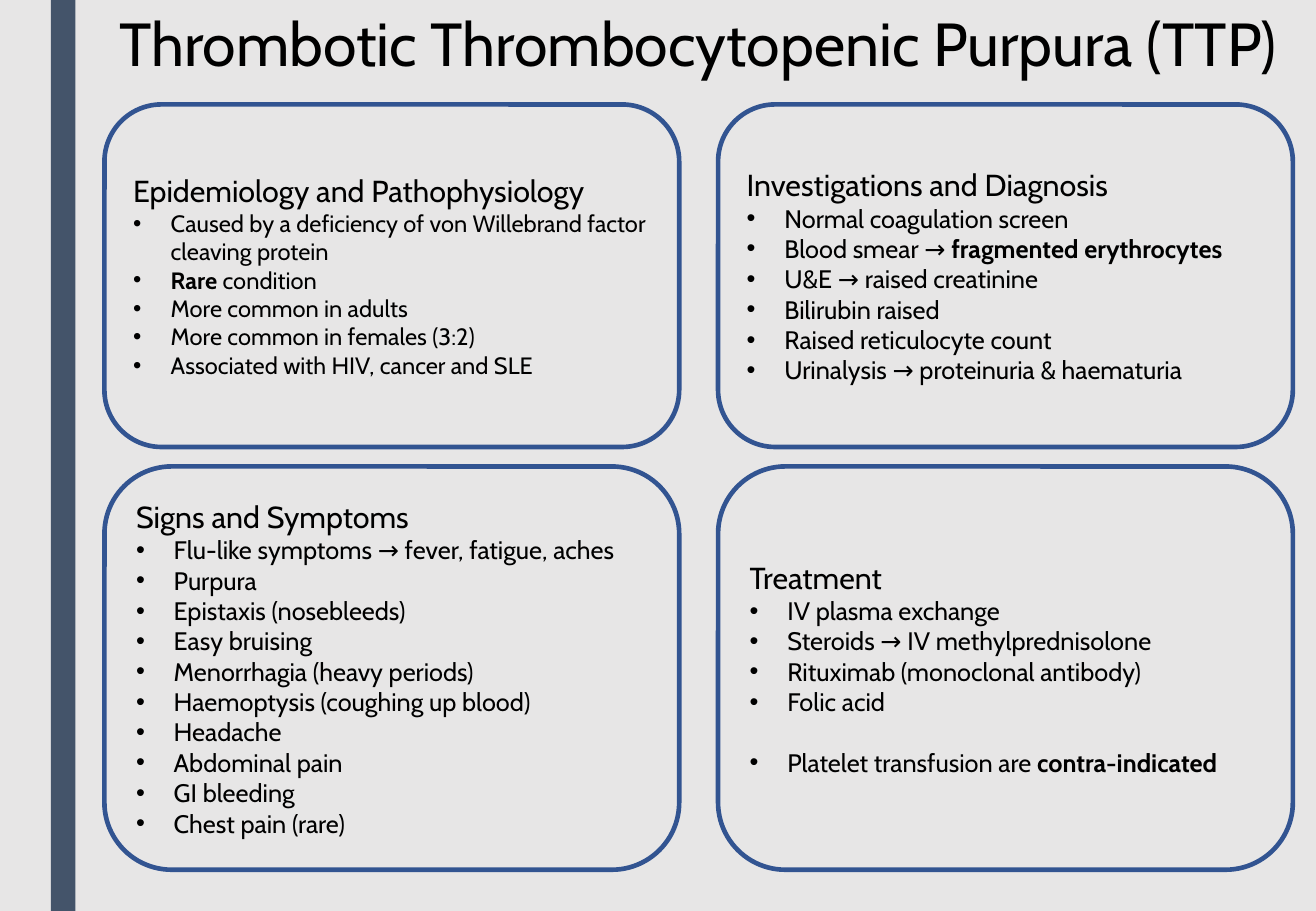
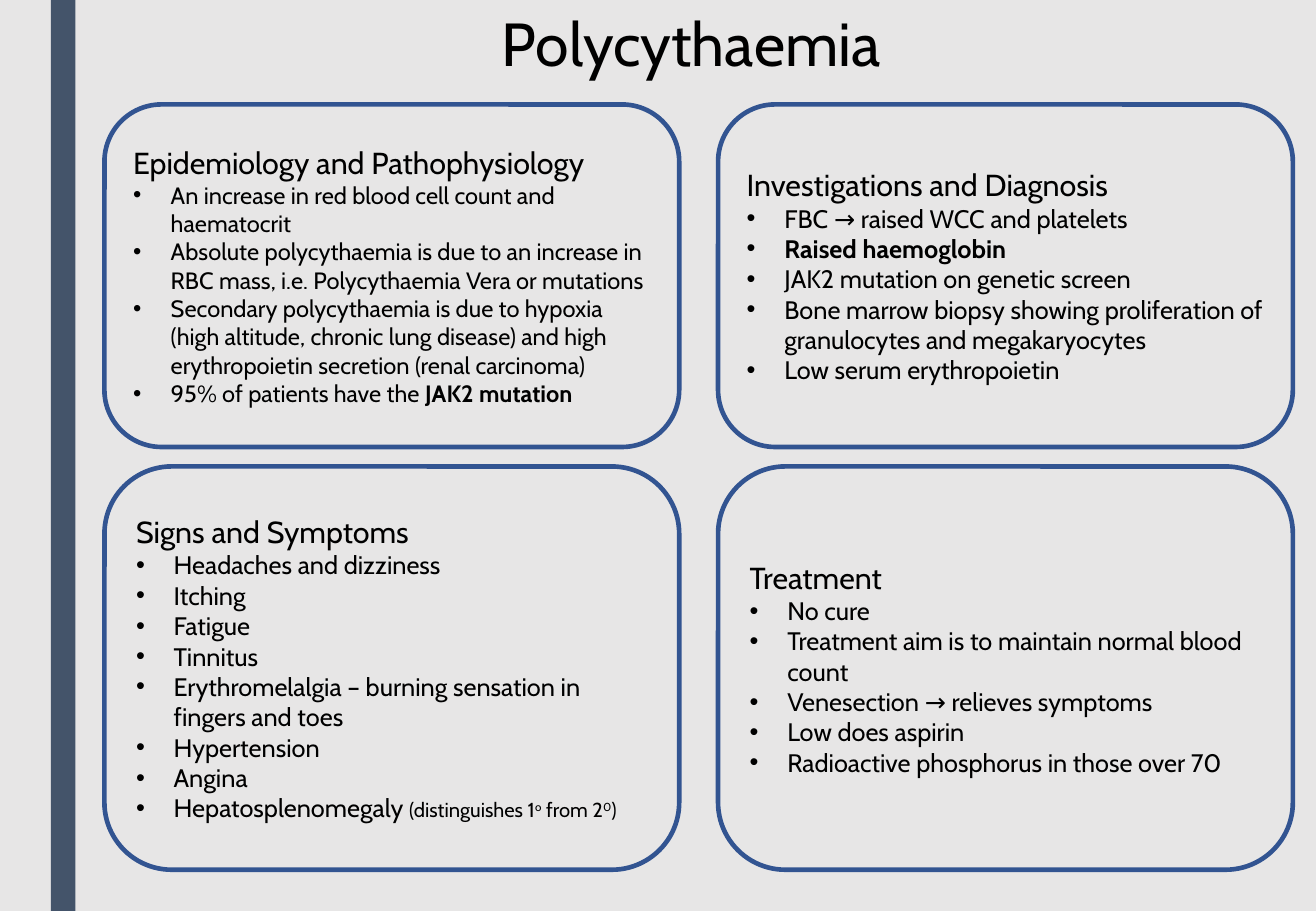
from lxml.etree import SubElement
from pptx import Presentation
from pptx.dml.color import RGBColor
from pptx.enum.shapes import MSO_SHAPE
from pptx.enum.text import MSO_ANCHOR, MSO_AUTO_SIZE, PP_ALIGN
from pptx.oxml.ns import qn
from pptx.util import Inches, Pt

COLOURS = {"background": "E7E6E6", "band": "44546A", "outline": "325491", "text": "000000"}
FONT = "Cabin"
TITLE_SIZE, HEADING_SIZE, BULLET_SIZE = 36, 18, 15

# Card grid: two equal columns, two rows given as (top, height)
CARD_LEFT, CARD_WIDTH, COLUMN_GAP = 0.86, 4.73, 0.32
CARD_ROWS = [(0.86, 2.82), (3.84, 3.32)]
BULLET_INDENT = 0.31

# Run styles
BOLD = {"bold": True}
SMALL = {"size": 12}
SMALL_RAISED = {"size": 12, "raised": True}


def colour(name):
    return RGBColor.from_string(COLOURS[name])


class Deck:
    """Holds the shared style and the slide being built."""

    def __init__(self):
        self.presentation = Presentation()
        self.presentation.slide_width = Inches(10.83)
        self.presentation.slide_height = Inches(7.5)
        self.layout = self.presentation.slide_layouts.get_by_name("Title Only")
        self.slide = None
        self.style_layout()

    def style_layout(self):
        background = self.presentation.slide_master.background.fill
        background.solid()
        background.fore_color.rgb = colour("background")
        title = self.layout.placeholders[0]
        title.left, title.top = Inches(0.66), Inches(0)
        title.width, title.height = Inches(10.17), Inches(0.71)

    def add_slide(self, title):
        self.slide = self.presentation.slides.add_slide(self.layout)
        frame = self.slide.shapes.title.text_frame
        frame.word_wrap = True
        frame.auto_size = MSO_AUTO_SIZE.NONE
        frame.vertical_anchor = MSO_ANCHOR.TOP
        paragraph = frame.paragraphs[0]
        paragraph.alignment = PP_ALIGN.CENTER
        self.add_run(paragraph, title, TITLE_SIZE)

    def add_band_to_layout(self):
        """Draw the side band, then move it to the layout all slides share."""
        band = self.slide.shapes.add_shape(
            MSO_SHAPE.RECTANGLE, Inches(0.42), Inches(0), Inches(0.2), Inches(7.5))
        band.shadow.inherit = False
        band.fill.solid()
        band.fill.fore_color.rgb = colour("band")
        band.line.fill.background()
        band.element.nvSpPr.cNvPr.set("id", "100")
        self.layout.shapes.element.insert(2, band.element)

    def add_card(self, row, column, heading, bullets, size=BULLET_SIZE):
        top, height = CARD_ROWS[row]
        left = CARD_LEFT + column * (CARD_WIDTH + COLUMN_GAP)
        card = self.slide.shapes.add_shape(
            MSO_SHAPE.ROUNDED_RECTANGLE,
            Inches(left), Inches(top), Inches(CARD_WIDTH), Inches(height))
        card.shadow.inherit = False
        card.fill.background()
        card.line.color.rgb = colour("outline")
        card.line.width = Pt(2.75)
        frame = card.text_frame
        frame.word_wrap = True
        frame.vertical_anchor = MSO_ANCHOR.MIDDLE
        paragraph = frame.paragraphs[0]
        paragraph.alignment = PP_ALIGN.LEFT
        self.add_run(paragraph, heading, HEADING_SIZE)
        for bullet in bullets:
            self.add_bullet(frame, bullet, size)
        return card

    def add_bullet(self, frame, bullet, size):
        """A bullet is a string or a list of (text, style) runs."""
        paragraph = frame.add_paragraph()
        paragraph.alignment = PP_ALIGN.LEFT
        properties = paragraph._p.get_or_add_pPr()
        properties.set("marL", str(Inches(BULLET_INDENT)))
        properties.set("indent", str(-Inches(BULLET_INDENT)))
        SubElement(properties, qn("a:buFont")).set("typeface", "Arial")
        SubElement(properties, qn("a:buChar")).set("char", "•")
        runs = [(bullet, {})] if isinstance(bullet, str) else bullet
        for text, style in runs:
            self.add_run(paragraph, text, **{"size": size, **style})

    def add_run(self, paragraph, text, size, bold=False, raised=False):
        run = paragraph.add_run()
        run.text = text
        run.font.name = FONT
        run.font.size = Pt(size)
        run.font.bold = bold
        run.font.color.rgb = colour("text")
        if raised:
            run._r.get_or_add_rPr().set("baseline", "30000")


def main():
    deck = Deck()

    # Thrombotic thrombocytopenic purpura
    deck.add_slide("Thrombotic Thrombocytopenic Purpura (TTP)")
    deck.add_band_to_layout()
    deck.add_card(0, 0, "Epidemiology and Pathophysiology", [
        "Caused by a deficiency of von Willebrand factor cleaving protein",
        [("Rare", BOLD), (" condition", {})],
        "More common in adults",
        "More common in females (3:2)",
        "Associated with HIV, cancer and SLE",
    ], size=14)
    deck.add_card(0, 1, "Investigations and Diagnosis", [
        "Normal coagulation screen",
        [("Blood smear → ", {}), ("fragmented erythrocytes", BOLD)],
        "U&E → raised creatinine",
        "Bilirubin raised",
        "Raised reticulocyte count",
        "Urinalysis → proteinuria & haematuria",
    ])
    deck.add_card(1, 0, "Signs and Symptoms", [
        "Flu-like symptoms → fever, fatigue, aches",
        "Purpura",
        "Epistaxis (nosebleeds)",
        "Easy bruising",
        "Menorrhagia (heavy periods)",
        "Haemoptysis (coughing up blood)",
        "Headache",
        "Abdominal pain",
        "GI bleeding",
        "Chest pain (rare)",
    ])
    treatment = deck.add_card(1, 1, "Treatment", [
        "IV plasma exchange",
        "Steroids → IV methylprednisolone",
        "Rituximab (monoclonal antibody)",
        "Folic acid",
        [("Platelet transfusion are ", {}), ("contra-indicated", BOLD)],
    ])
    # Set the warning apart by one line
    treatment.text_frame.paragraphs[-1].space_before = Pt(18)

    # Polycythaemia
    deck.add_slide("Polycythaemia ")
    deck.add_card(0, 0, "Epidemiology and Pathophysiology", [
        "An increase in red blood cell count and haematocrit",
        "Absolute polycythaemia is due to an increase in RBC mass, "
        "i.e. Polycythaemia Vera or mutations",
        "Secondary polycythaemia is due to hypoxia (high altitude, chronic lung disease) "
        "and high erythropoietin secretion (renal carcinoma)",
        [("95% of patients have the ", {}), ("JAK2 mutation", BOLD)],
    ], size=14)
    deck.add_card(0, 1, "Investigations and Diagnosis", [
        "FBC → raised WCC and platelets",
        [("Raised haemoglobin", BOLD)],
        "JAK2 mutation on genetic screen",
        "Bone marrow biopsy showing proliferation of granulocytes and megakaryocytes",
        "Low serum erythropoietin",
    ])
    deck.add_card(1, 0, "Signs and Symptoms", [
        "Headaches and dizziness",
        "Itching",
        "Fatigue",
        "Tinnitus",
        "Erythromelalgia – burning sensation in fingers and toes",
        "Hypertension",
        "Angina",
        [("Hepatosplenomegaly ", {}), ("(distinguishes 1", SMALL), ("o", SMALL_RAISED),
         (" from 2", SMALL), ("0", SMALL_RAISED), (")", SMALL)],
    ])
    deck.add_card(1, 1, "Treatment", [
        "No cure",
        "Treatment aim is to maintain normal blood count",
        "Venesection → relieves symptoms",
        "Low does aspirin",
        "Radioactive phosphorus in those over 70",
    ])

    deck.presentation.save("out.pptx")


if __name__ == "__main__":
    main()
